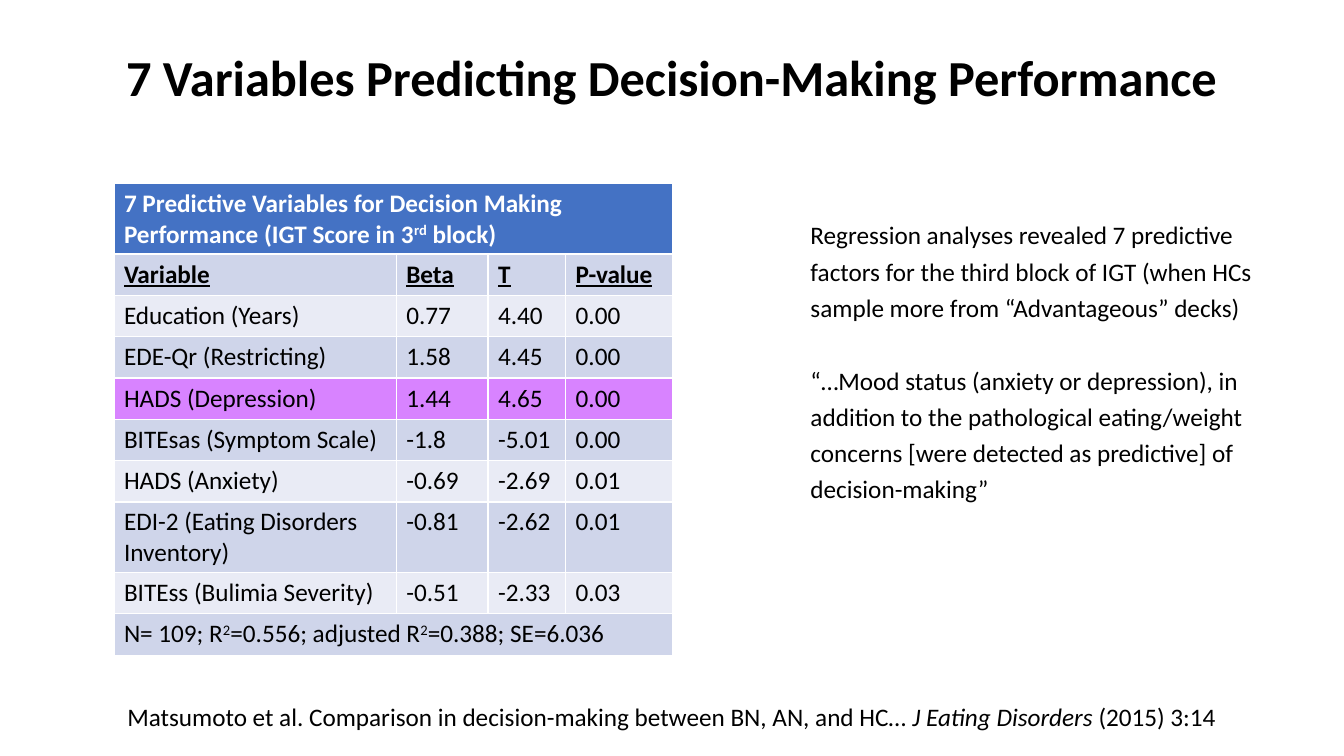
from dataclasses import dataclass

from pptx import Presentation
from pptx.dml.color import RGBColor
from pptx.enum.text import MSO_ANCHOR, MSO_AUTO_SIZE, PP_ALIGN
from pptx.util import Inches, Pt


@dataclass(frozen=True)
class Theme:
    """Colours, font and type sizes of the slide."""
    font: str = "Calibri"
    title: int = 36
    body: int = 18
    ink: str = "000000"
    white: str = "FFFFFF"
    head: str = "4472C4"
    dark: str = "CFD5EA"
    light: str = "E9EBF5"
    mark: str = "D883FF"


THEME = Theme()
HEAD = [("7 Predictive Variables for Decision Making Performance (IGT Score in 3", ""),
        ("rd", "sup"), (" block)", "")]
ROWS = [
    ("Variable", "Beta", "T", "P-value"),
    ("Education (Years)", "0.77", "4.40", "0.00"),
    ("EDE-Qr (Restricting)", "1.58", "4.45", "0.00"),
    ("HADS (Depression)", "1.44", "4.65", "0.00"),
    ("BITEsas (Symptom Scale)", "-1.8", "-5.01", "0.00"),
    ("HADS (Anxiety)", "-0.69", "-2.69", "0.01"),
    ("EDI-2 (Eating Disorders Inventory)", "-0.81", "-2.62", "0.01"),
    ("BITEss (Bulimia Severity)", "-0.51", "-2.33", "0.03"),
]
FOOT = [("N= 109; R", ""), ("2", "sup"), ("=0.556; adjusted R", ""), ("2", "sup"),
        ("=0.388; SE=6.036", "")]
MARKED = 4
TALL = (0, 7)
NOTES = [
    "Regression analyses revealed 7 predictive factors for the third block of IGT "
    "(when HCs sample more from “Advantageous” decks)",
    "“…Mood status (anxiety or depression), in addition to the pathological "
    "eating/weight concerns [were detected as predictive] of decision-making”",
]
CITE = [("Matsumoto et al. Comparison in decision-making between BN, AN, and HC… ", ""),
        ("J Eating Disorders ", "italic"), ("(2015) 3:14", "")]


def write(para, parts, size=THEME.body, color=THEME.ink, bold=False, under=False):
    """Fill a paragraph with (text, style) parts in one font."""
    for text, style in parts:
        run = para.add_run()
        run.text = text
        if style == "italic":
            run.font.italic = True
        elif style == "sup":
            run._r.get_or_add_rPr().set("baseline", "30000")
    font = para.font
    font.name, font.size, font.bold, font.underline = THEME.font, Pt(size), bold, under
    font.color.rgb = RGBColor.from_string(color)


def add_title(slide, box):
    """Place the centred title."""
    shape = slide.shapes.title
    shape.left, shape.top, shape.width, shape.height = map(Inches, box)
    shape.text_frame.vertical_anchor = MSO_ANCHOR.MIDDLE
    para = shape.text_frame.paragraphs[0]
    para.alignment = PP_ALIGN.CENTER
    para.line_spacing = 0.9
    write(para, [("7 Variables Predicting Decision-Making Performance", "")],
          THEME.title, bold=True)


def fill_cell(cell, parts, fill, **style):
    """Colour a table cell and write its text."""
    cell.fill.solid()
    cell.fill.fore_color.rgb = RGBColor.from_string(fill)
    write(cell.text_frame.paragraphs[0], parts, **style)


def add_grid(slide, box):
    """Place the regression table with its merged first and last rows."""
    last = len(ROWS) + 1
    table = slide.shapes.add_table(last + 1, 4, *map(Inches, box)).table
    for col, width in zip(table.columns, (2.8, 0.91, 0.77, 1.06)):
        col.width = Inches(width)
    for i, row in enumerate(table.rows):
        row.height = Inches(0.68 if i in TALL else 0.41)
    for i in (0, last):
        table.cell(i, 0).merge(table.cell(i, 3))
    fill_cell(table.cell(0, 0), HEAD, THEME.head, color=THEME.white, bold=True)
    for i, row in enumerate(ROWS, 1):
        band = THEME.dark if i % 2 else THEME.light
        fill = THEME.mark if i == MARKED else band
        for j, text in enumerate(row):
            fill_cell(table.cell(i, j), [(text, "")], fill, bold=i == 1, under=i == 1)
    fill_cell(table.cell(last, 0), FOOT, THEME.dark)


def add_notes(slide, box):
    """Place the two findings beside the table."""
    frame = slide.shapes.add_textbox(*map(Inches, box)).text_frame
    frame.word_wrap = True
    frame.auto_size = MSO_AUTO_SIZE.SHAPE_TO_FIT_TEXT
    for i, text in enumerate(NOTES):
        para = frame.add_paragraph() if i else frame.paragraphs[0]
        para.line_spacing = 1.2
        if i:
            para.space_before = Pt(26)
        write(para, [(text, "")])


def add_cite(slide, box):
    """Place the centred source line."""
    frame = slide.shapes.add_textbox(*map(Inches, box)).text_frame
    frame.word_wrap = False
    frame.auto_size = MSO_AUTO_SIZE.SHAPE_TO_FIT_TEXT
    para = frame.paragraphs[0]
    para.alignment = PP_ALIGN.CENTER
    write(para, CITE)


def main():
    """Build and save the slide."""
    deck = Presentation()
    deck.slide_width, deck.slide_height = Inches(13.33), Inches(7.5)
    slide = deck.slides.add_slide(deck.slide_layouts[5])
    add_title(slide, (0, 0.07, 13.33, 1.45))
    add_cite(slide, (1.13, 6.91, 11.06, 0.4))
    add_notes(slide, (7.94, 2.07, 4.71, 3.01))
    add_grid(slide, (1.13, 1.82, 5.53, 4.64))
    deck.save("out.pptx")


if __name__ == "__main__":
    main()
